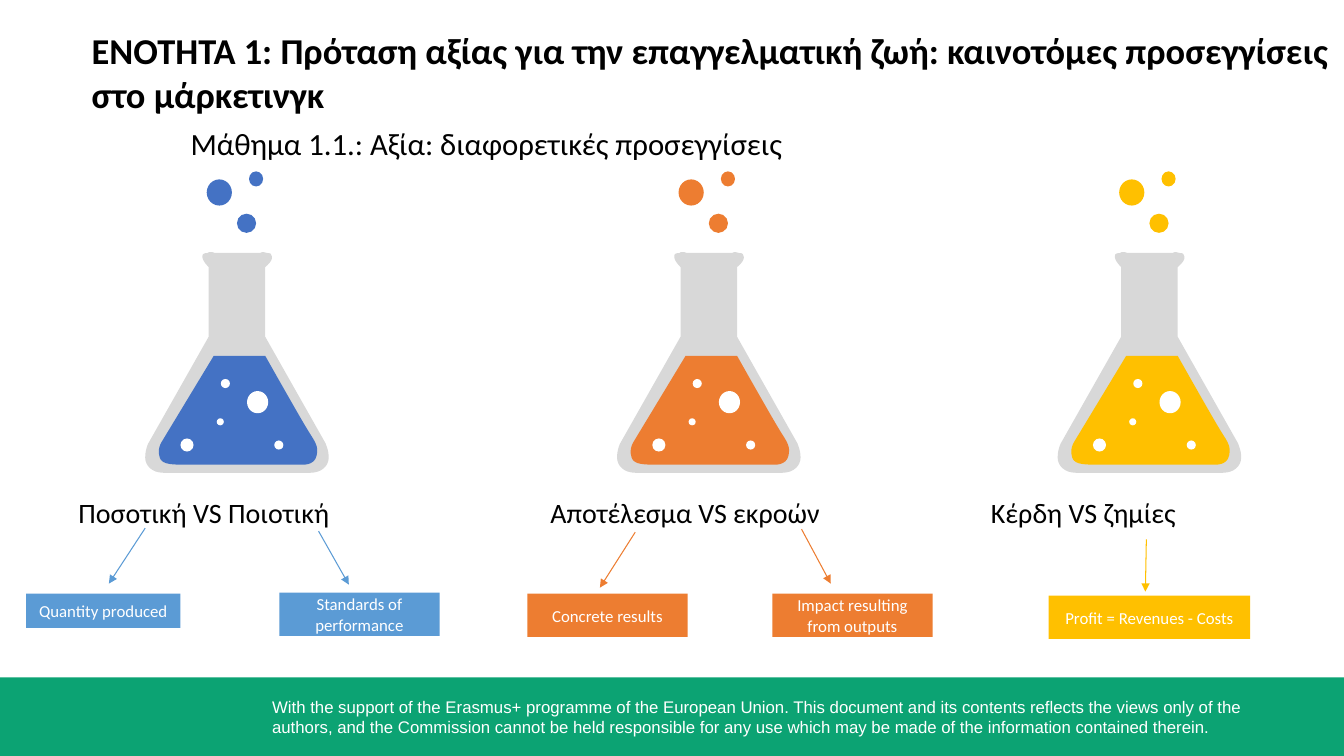
from lxml import etree
from pptx import Presentation, util as u
from pptx.dml.color import RGBColor
from pptx.enum import shapes, text
from pptx.oxml import ns

WHITE, BLACK, GLASS, GREEN = "FFFFFF", "000000", "D8D8D8", "0CA373"
BLUE, LIGHT_BLUE, ORANGE, YELLOW = "4472C4", "5B9BD5", "ED7D31", "FFC000"

# Outlines in inches from the flask's corner: a start point, then
# lines (x, y) and cubic curves (x1, y1, x2, y2, x, y).
GLASS_OUTLINE = [
    (1.64, 2.99), (0.18, 2.99), (0.07, 2.99, 0, 2.92, 0, 2.84),
    (0, 2.76, 0.03, 2.7, 0.03, 2.7), (0.63, 1.64), (0.63, 0.95),
    (0.58, 0.9, 0.56, 0.86, 0.57, 0.83), (0.57, 0.82, 0.59, 0.81, 0.62, 0.81),
    (0.63, 0.8, 0.64, 0.8, 0.65, 0.8), (0.67, 0.8, 0.69, 0.81, 0.69, 0.81),
    (1.14, 0.81), (1.14, 0.81, 1.16, 0.8, 1.17, 0.8), (1.21, 0.81),
    (1.24, 0.81, 1.25, 0.82, 1.25, 0.83), (1.27, 0.86, 1.25, 0.9, 1.19, 0.95),
    (1.19, 1.64), (1.79, 2.7), (1.79, 2.71, 1.82, 2.76, 1.82, 2.84),
    (1.82, 2.92, 1.75, 2.99, 1.64, 2.99),
]
LIQUID_OUTLINE = [
    (0.68, 1.83), (0.16, 2.69), (0.16, 2.69, 0.12, 2.76, 0.14, 2.82),
    (0.15, 2.87, 0.17, 2.91, 0.34, 2.91), (1.56, 2.91),
    (1.56, 2.91, 1.68, 2.92, 1.7, 2.82), (1.72, 2.73, 1.69, 2.69, 1.62, 2.58),
    (1.55, 2.47, 1.19, 1.83, 1.19, 1.83),
]
# left, top, width, height
LIQUID_BUBBLES = [
    (0.75, 2.06, 0.09, 0.09), (1.28, 2.67, 0.09, 0.09), (0.35, 2.65, 0.13, 0.13),
    (0.71, 2.45, 0.07, 0.07), (1.01, 2.18, 0.21, 0.22),
]
RISING_BUBBLES = [
    (0.91, 0.42, 0.19, 0.19), (0.61, 0.08, 0.25, 0.26), (1.03, 0, 0.14, 0.15),
]

COLUMN_TOP = 1.7
# column left, heading, liquid colour, branch colour,
# branches (text, box, arrow start, arrow end) measured from the column's corner
COLUMNS = [
    (0.68, "Ποσοτική VS Ποιοτική", BLUE, LIGHT_BLUE, [
        ("Quantity produced", (-0.42, 4.19, 1.53, 0.34), (0.76, 3.54), (0.4, 4.09)),
        ("Standards of performance", (2.09, 4.18, 1.59, 0.43), (2.48, 3.57), (2.78, 4.1)),
    ]),
    (5.36, "Αποτέλεσμα VS εκροών", ORANGE, ORANGE, [
        ("Concrete results", (-0.13, 4.19, 1.59, 0.43), (0.94, 3.58), (0.59, 4.13)),
        ("Impact resulting from outputs", (2.3, 4.19, 1.59, 0.43), (2.59, 3.55), (2.88, 4.09)),
    ]),
    (9.73, "Κέρδη VS ζημίες", YELLOW, YELLOW, [
        ("Profit = Revenues - Costs", (0.67, 4.21, 2, 0.43), (1.64, 3.65), (1.63, 4.17)),
    ]),
]


def rgb(value):
    return RGBColor.from_string(value)


def inches(*values):
    return [u.Inches(value) for value in values]


def paint(shape, color):
    shape.fill.solid()
    shape.fill.fore_color.rgb = rgb(color)
    shape.line.fill.background()
    shape.shadow.inherit = False


def write(shape, words, size, color=BLACK, bold=False, font="Calibri",
          align=text.PP_ALIGN.LEFT, anchor=text.MSO_ANCHOR.TOP,
          margins=(0.1, 0.05, 0.1, 0.05)):
    frame = shape.text_frame
    frame.word_wrap = True
    frame.auto_size = text.MSO_AUTO_SIZE.NONE
    frame.vertical_anchor = anchor
    (frame.margin_left, frame.margin_top,
     frame.margin_right, frame.margin_bottom) = inches(*margins)
    paragraph = frame.paragraphs[0]
    paragraph.alignment = align
    paragraph.line_spacing = 1.0
    run = paragraph.add_run()
    run.text = words
    run.font.size = u.Pt(size)
    run.font.name = font
    run.font.bold = bold
    run.font.color.rgb = rgb(color)


def flatten(outline, steps=8):
    """Turn lines and cubic curves into a list of points."""
    points = [outline[0]]
    for segment in outline[1:]:
        if len(segment) == 2:
            points.append(segment)
            continue
        corners = [points[-1], segment[:2], segment[2:4], segment[4:]]
        for step in range(1, steps + 1):
            t = step / steps
            weights = ((1 - t) ** 3, 3 * t * (1 - t) ** 2, 3 * t * t * (1 - t), t ** 3)
            points.append(tuple(
                sum(w * corner[axis] for w, corner in zip(weights, corners))
                for axis in (0, 1)))
    return points


def add_flask(slide, left, top, color):
    group = slide.shapes.add_group_shape()
    for outline, fill in ((GLASS_OUTLINE, GLASS), (LIQUID_OUTLINE, color)):
        points = [inches(left + x, top + y) for x, y in flatten(outline)]
        builder = group.shapes.build_freeform(*points[0])
        builder.add_line_segments(points[1:], close=True)
        paint(builder.convert_to_shape(), fill)
    for bubbles, fill in ((LIQUID_BUBBLES, WHITE), (RISING_BUBBLES, color)):
        for x, y, width, height in bubbles:
            bubble = group.shapes.add_shape(
                shapes.MSO_SHAPE.OVAL, *inches(left + x, top + y, width, height))
            paint(bubble, fill)


def add_arrow(slide, start, end, color):
    arrow = slide.shapes.add_connector(
        shapes.MSO_CONNECTOR.STRAIGHT, *inches(*start, *end))
    arrow.line.color.rgb = rgb(color)
    arrow.line.width = u.Pt(0.75)
    properties = arrow.line._get_or_add_ln()
    etree.SubElement(properties, ns.qn("a:tailEnd"), type="triangle")
    etree.SubElement(arrow._element.spPr, ns.qn("a:effectLst"))


def add_column(slide, left, top, heading, liquid_color, branch_color, branches):
    """Flask, heading below it, and arrows to the branch boxes."""
    add_flask(slide, left + 0.76, top, liquid_color)
    write(slide.shapes.add_textbox(*inches(left, top + 3.17, 3.35, 0.77)), heading, 20)
    for words, (x, y, width, height), start, end in branches:
        box = slide.shapes.add_shape(
            shapes.MSO_SHAPE.RECTANGLE, *inches(left + x, top + y, width, height))
        paint(box, branch_color)
        write(box, words, 12, WHITE, align=text.PP_ALIGN.CENTER,
              anchor=text.MSO_ANCHOR.MIDDLE)
        add_arrow(slide, (left + start[0], top + start[1]),
                  (left + end[0], top + end[1]), branch_color)


def add_titles(slide, left, top, width):
    title = slide.shapes.title
    title.left, title.top, title.width, title.height = inches(left, top, width, 0.89)
    write(title, "ΕΝΟΤΗΤΑ 1: Πρόταση αξίας για την επαγγελματική ζωή: "
          "καινοτόμες προσεγγίσεις στο μάρκετινγκ", 26, bold=True, margins=(0, 0.01, 0, 0))
    subtitle = slide.shapes.add_textbox(*inches(left + 0.98, top + 0.95, 6.68, 0.76))
    write(subtitle, "Μάθημα 1.1.: Αξία: διαφορετικές προσεγγίσεις", 22,
          margins=(0, 0.02, 0, 0))


def add_footer(slide, left, top, width, height):
    band = slide.shapes.add_shape(
        shapes.MSO_SHAPE.RECTANGLE, *inches(left, top, width, height))
    paint(band, GREEN)
    notice = slide.shapes.add_textbox(*inches(left + 2.6, top + 0.14, 10.42, 0.5))
    write(notice, "With the support of the Erasmus+ programme of the European Union. "
          "This document and its contents reflects the views only of the authors, and "
          "the Commission cannot be held responsible for any use which may be made of "
          "the information contained therein.", 12, WHITE, font="Arial")


def main():
    presentation = Presentation()
    presentation.slide_width, presentation.slide_height = inches(13.33, 7.5)
    slide = presentation.slides.add_slide(presentation.slide_layouts[5])
    add_footer(slide, 0, 6.72, 13.33, 0.78)
    add_titles(slide, 0.91, 0.27, 12.42)
    for left, *content in COLUMNS:
        add_column(slide, left, COLUMN_TOP, *content)
    presentation.save("out.pptx")


if __name__ == "__main__":
    main()
